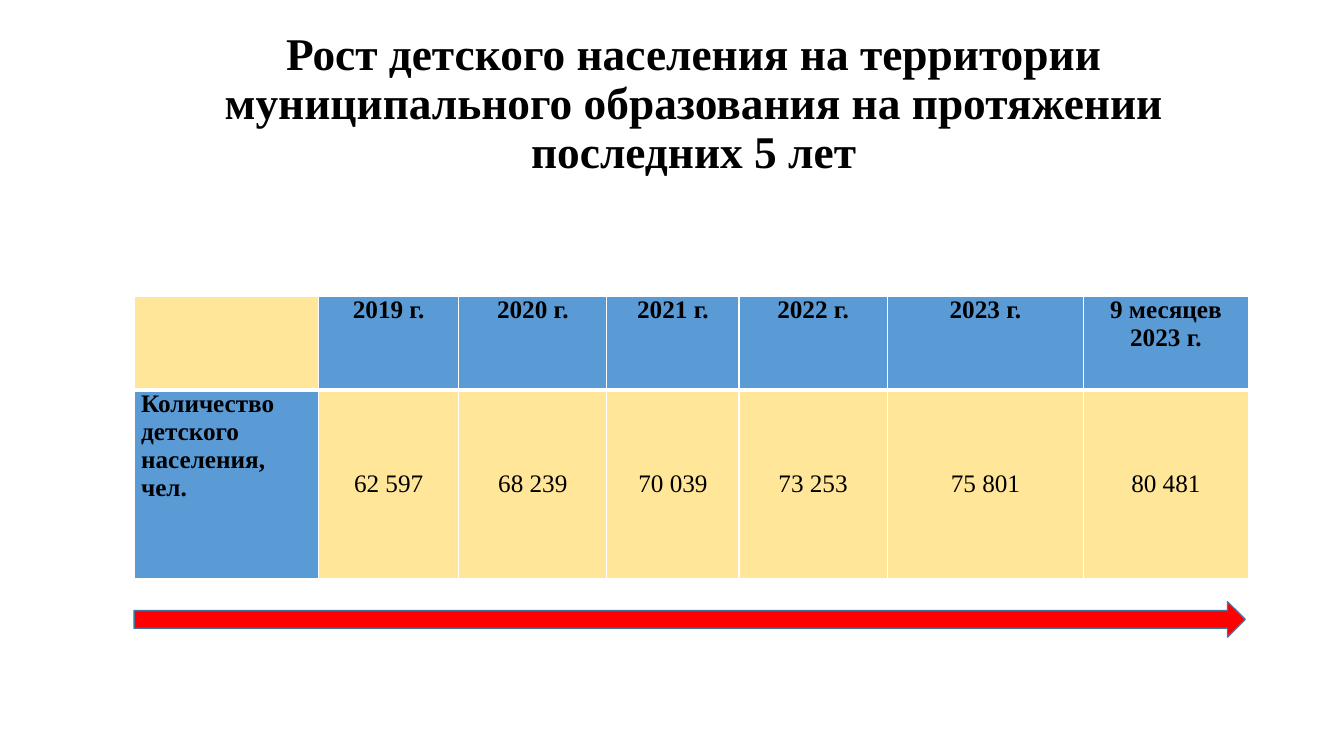
from dataclasses import dataclass

from lxml import etree
from pptx import Presentation
from pptx import util as u
from pptx.dml import color
from pptx.enum import shapes, text
from pptx.oxml import ns

PX = 9144
FONT = "Times New Roman"
BLACK, WHITE, RED = "000000", "FFFFFF", "FF0000"
BLUE, YELLOW, OUTLINE = "5B9BD5", "FFE699", "43739E"
LEFT = 133
ROW_HEIGHTS = (93, 187)


@dataclass(frozen=True)
class Column:
    width: int
    heading: str
    value: str


COLUMNS = (
    Column(183, "", "Количество детского населения, чел."),
    Column(139, "2019 г.", "62 597"),
    Column(147, "2020 г.", "68 239"),
    Column(131, "2021 г.", "70 039"),
    Column(147, "2022 г.", "73 253"),
    Column(195, "2023 г.", "75 801"),
    Column(163, "9 месяцев 2023 г.", "80 481"),
)


def px(length: int) -> u.Emu:
    return u.Emu(length * PX)


def rgb(value: str) -> color.RGBColor:
    return color.RGBColor.from_string(value)


def add_run(paragraph, words: str, size: float, bold: bool) -> None:
    run = paragraph.add_run()
    run.text = words
    run.font.name = FONT
    run.font.size = u.Pt(size)
    run.font.bold = bold
    run.font.color.rgb = rgb(BLACK)


def set_borders(cell, **widths: int) -> None:
    properties = cell._tc.get_or_add_tcPr()
    for side, width in widths.items():
        line = etree.SubElement(properties, ns.qn(f"a:ln{side}"), w=str(u.Pt(width)))
        fill = etree.SubElement(line, ns.qn("a:solidFill"))
        etree.SubElement(fill, ns.qn("a:srgbClr"), val=WHITE)


def add_title(slide) -> None:
    title = slide.shapes.title
    title.left, title.top, title.width, title.height = map(px, (113, 50, 1150, 108))
    frame = title.text_frame
    frame.word_wrap = True
    frame.auto_size = text.MSO_AUTO_SIZE.NONE
    frame.vertical_anchor = text.MSO_ANCHOR.MIDDLE
    paragraph = frame.paragraphs[0]
    paragraph.alignment = text.PP_ALIGN.CENTER
    paragraph.line_spacing = 0.9
    add_run(
        paragraph,
        "Рост детского населения на территории муниципального образования "
        "на протяжении последних 5 лет",
        32.4,
        True,
    )


def fill_cell(cell, words: str, is_header: bool, is_label: bool) -> None:
    cell.margin_left = cell.margin_right = px(7)
    cell.margin_top = cell.margin_bottom = 0
    set_borders(cell, L=1, R=1, T=1 if is_header else 3, B=3 if is_header else 1)
    cell.fill.solid()
    cell.fill.fore_color.rgb = rgb(BLUE if is_header != is_label else YELLOW)
    is_value = not is_header and not is_label
    cell.vertical_anchor = text.MSO_ANCHOR.MIDDLE if is_value else text.MSO_ANCHOR.TOP
    paragraph = cell.text_frame.paragraphs[0]
    paragraph.alignment = text.PP_ALIGN.JUSTIFY if is_label else text.PP_ALIGN.CENTER
    if words:
        add_run(paragraph, words, 18, not is_value)


def add_population_table(slide) -> None:
    width = sum(column.width for column in COLUMNS)
    table = slide.shapes.add_table(
        2, len(COLUMNS), px(LEFT), px(294), px(width), px(sum(ROW_HEIGHTS))
    ).table
    for row, height in zip(table.rows, ROW_HEIGHTS):
        row.height = px(height)
    for index, column in enumerate(COLUMNS):
        table.columns[index].width = px(column.width)
        for row_index, words in enumerate((column.heading, column.value)):
            fill_cell(table.cell(row_index, index), words, row_index == 0, index == 0)


def add_growth_arrow(slide) -> None:
    arrow = slide.shapes.add_shape(
        shapes.MSO_SHAPE.RIGHT_ARROW, px(LEFT), px(597), px(1102), px(35)
    )
    arrow.shadow.inherit = False
    arrow.fill.solid()
    arrow.fill.fore_color.rgb = rgb(RED)
    arrow.line.color.rgb = rgb(OUTLINE)
    arrow.line.width = u.Pt(1)


def main() -> None:
    presentation = Presentation()
    presentation.slide_width, presentation.slide_height = px(1333), px(750)
    slide = presentation.slides.add_slide(presentation.slide_layouts[5])
    add_title(slide)
    add_population_table(slide)
    add_growth_arrow(slide)
    presentation.save("out.pptx")


if __name__ == "__main__":
    main()
